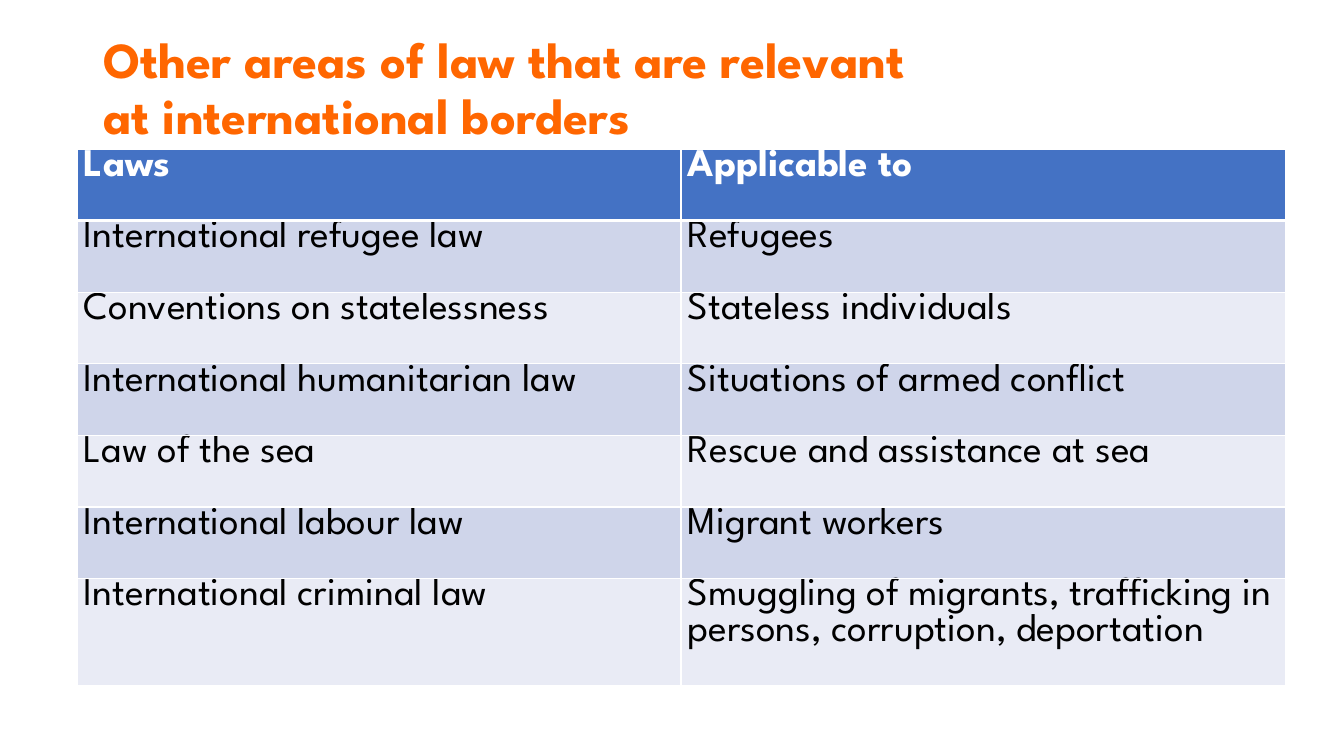
import copy

from lxml import etree
from pptx import Presentation
from pptx import util as u
from pptx.dml.color import RGBColor
from pptx.enum import text
from pptx.oxml import ns

PX = 914400 / 100.8  # EMU in one px
FONT = "League Spartan"
ORANGE = RGBColor(0xFF, 0x66, 0x00)
BLUE = RGBColor(0x44, 0x72, 0xC4)
BAND_DARK = RGBColor(0xCF, 0xD5, 0xEA)
BAND_LIGHT = RGBColor(0xE9, 0xEB, 0xF5)
WHITE = RGBColor(0xFF, 0xFF, 0xFF)
BLACK = RGBColor(0x00, 0x00, 0x00)

TITLE_LINES = ["Other areas of law that are relevant", "at international borders"]
LAWS = [
    ("Laws", "Applicable to"),
    ("International refugee law", "Refugees"),
    ("Conventions on statelessness", "Stateless individuals"),
    ("International humanitarian law", "Situations of armed conflict"),
    ("Law of the sea", "Rescue and assistance at sea"),
    ("International labour law", "Migrant workers"),
    ("International criminal law",
     "Smuggling of migrants, trafficking in persons, corruption, deportation"),
]
COLUMN_WIDTHS = [604, 605]
TABLE_HEIGHT = 537
ROW_LINES = [2] * 6 + [3]  # text lines each row has room for


def px(n):
    return u.Emu(round(n * PX))


def add_run(p, words, size, color, bold):
    r = p.add_run()
    r.text = words
    r.font.name = FONT
    r.font.size = u.Pt(size)
    r.font.bold = bold
    r.font.color.rgb = color
    return r


def add_title(s, lines):
    sp = s.shapes.title
    sp.left, sp.top, sp.width, sp.height = px(93), px(16), px(1159), px(146)
    tf = sp.text_frame
    tf.word_wrap = True
    tf.auto_size = text.MSO_AUTO_SIZE.NONE
    tf.vertical_anchor = text.MSO_ANCHOR.MIDDLE
    p = tf.paragraphs[0]
    p.alignment = text.PP_ALIGN.LEFT
    p.line_spacing = u.Pt(39.5)
    for i, line in enumerate(lines):
        if i:
            # The break takes the size and font of the run before it
            p.add_line_break()
            p._p[-1].append(copy.deepcopy(r._r.rPr))
        r = add_run(p, line, 36, ORANGE, True)


def add_border(cell, side, points):
    ln = etree.SubElement(cell._tc.get_or_add_tcPr(), ns.qn(f"a:ln{side}"),
                          w=str(u.Pt(points)))
    fill = etree.SubElement(ln, ns.qn("a:solidFill"))
    etree.SubElement(fill, ns.qn("a:srgbClr"), val=str(WHITE))


def fill_cell(cell, words, row):
    header = row == 0
    cell.margin_left = cell.margin_right = px(7)
    cell.margin_top = cell.margin_bottom = 0
    cell.vertical_anchor = text.MSO_ANCHOR.TOP
    # Borders: a heavier line parts the header from the body
    for side in "LRTB":
        heavy = (row, side) in [(0, "B"), (1, "T")]
        add_border(cell, side, 3 if heavy else 1)
    cell.fill.solid()
    band = BAND_DARK if row % 2 else BAND_LIGHT
    cell.fill.fore_color.rgb = BLUE if header else band
    add_run(cell.text_frame.paragraphs[0], words, 28,
            WHITE if header else BLACK, header)


def add_law_table(s, rows):
    frame = s.shapes.add_table(len(rows), len(COLUMN_WIDTHS), px(77), px(149),
                               px(sum(COLUMN_WIDTHS)), px(TABLE_HEIGHT))
    table = frame.table
    for column, width in zip(table.columns, COLUMN_WIDTHS):
        column.width = px(width)
    for i, (row, lines) in enumerate(zip(table.rows, ROW_LINES)):
        row.height = px(TABLE_HEIGHT * lines / sum(ROW_LINES))
        for cell, words in zip(row.cells, rows[i]):
            fill_cell(cell, words, i)


def main():
    prs = Presentation()
    prs.slide_width, prs.slide_height = px(1344), px(756)
    s = prs.slides.add_slide(prs.slide_layouts[5])
    add_title(s, TITLE_LINES)
    add_law_table(s, LAWS)
    prs.save("out.pptx")


if __name__ == "__main__":
    main()
